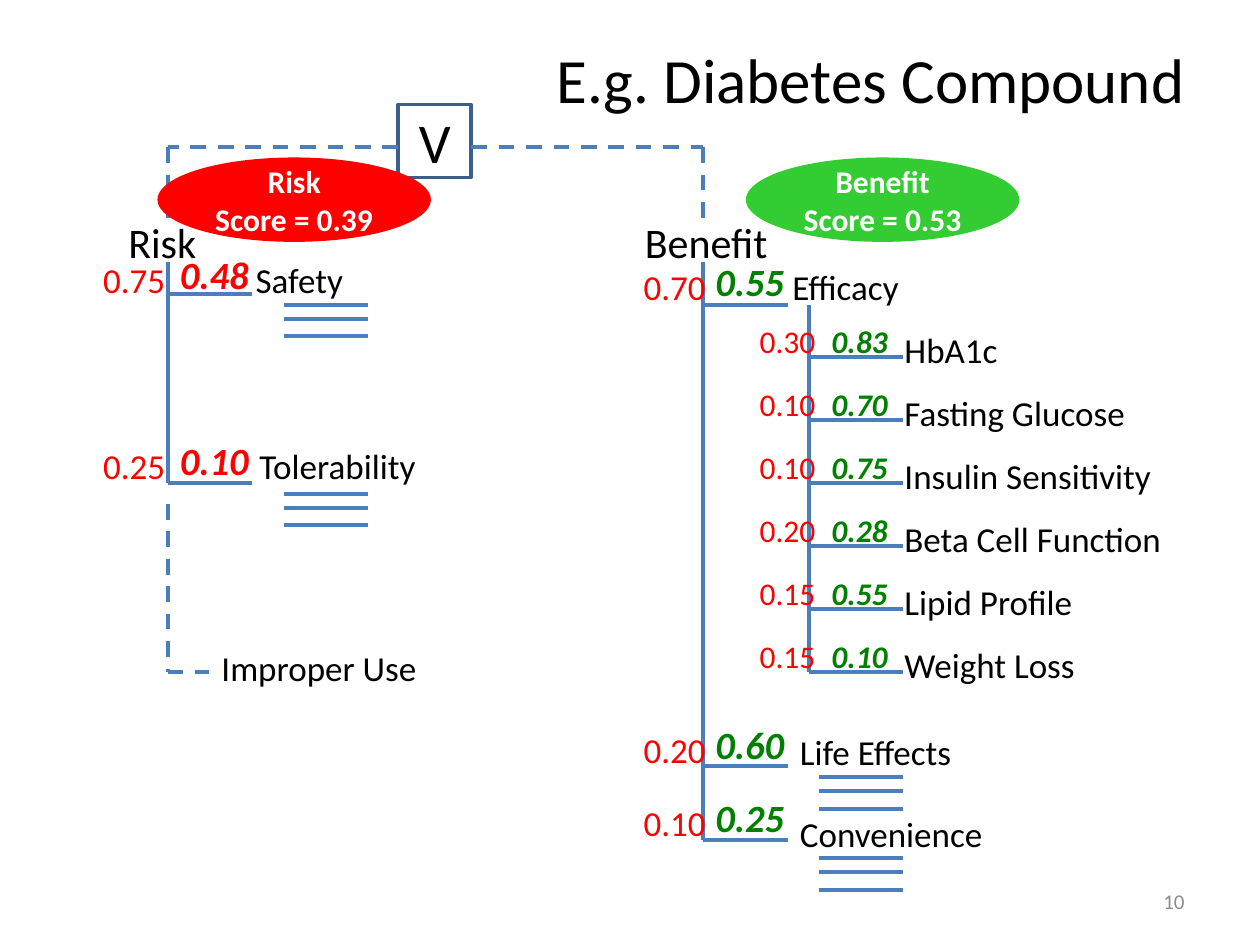
from dataclasses import dataclass

from lxml import etree
from pptx import Presentation
from pptx.dml.color import RGBColor
from pptx.enum.dml import MSO_LINE
from pptx.enum.shapes import MSO_CONNECTOR, MSO_SHAPE
from pptx.enum.text import MSO_ANCHOR, MSO_AUTO_SIZE, PP_ALIGN
from pptx.oxml.ns import qn
from pptx.util import Inches, Pt

STRAIGHT = MSO_CONNECTOR.STRAIGHT
DASH = MSO_LINE.DASH
OVAL, RECTANGLE = MSO_SHAPE.OVAL, MSO_SHAPE.RECTANGLE
TOP, MIDDLE = MSO_ANCHOR.TOP, MSO_ANCHOR.MIDDLE
FIT = MSO_AUTO_SIZE.SHAPE_TO_FIT_TEXT
LEFT, CENTER, RIGHT = PP_ALIGN.LEFT, PP_ALIGN.CENTER, PP_ALIGN.RIGHT


@dataclass(frozen=True)
class Theme:
    font: str = "Calibri"
    ink: str = "000000"
    white: str = "FFFFFF"
    gray: str = "8C8C8C"
    red: str = "FF0000"
    green: str = "008000"
    oval_green: str = "33CC33"
    branch: str = "4B7EBC"
    root_edge: str = "3A5F8C"
    title: int = 36
    root: int = 32
    heading: int = 24
    score: int = 22
    label: int = 20
    detail: int = 18
    number: int = 12
    branch_width: float = 2.25
    root_width: float = 2


THEME = Theme()


@dataclass(frozen=True)
class Box:
    left: float
    top: float
    width: float
    height: float

    def inner(self, left, top, width, height):
        return Box(self.left + left, self.top + top, width, height)

    def lengths(self):
        return [Inches(value) for value in (self.left, self.top, self.width, self.height)]


@dataclass(frozen=True)
class Criterion:
    name: str
    weight: str
    score: str
    line: float
    weight_top: float
    name_left: float
    name_top: float
    name_width: float
    marks_top: float | None = None


def write(frame, lines, size, color, align=LEFT, bold=False, italic=False):
    for index, line in enumerate(lines):
        para = frame.paragraphs[0] if index == 0 else frame.add_paragraph()
        para.text = line
        para.alignment = align
        para.font.name = THEME.font
        para.font.size = Pt(size)
        para.font.color.rgb = RGBColor.from_string(color)
        para.font.bold = bold
        para.font.italic = italic


def add_label(page, box, text, size, color=THEME.ink, emphasis=False):
    frame = page.shapes.add_textbox(*box.lengths()).text_frame
    frame.word_wrap = False
    frame.auto_size = FIT
    frame.vertical_anchor = TOP
    write(frame, [text], size, color, bold=emphasis, italic=emphasis)


def add_right_text(page, box, text, size, color):
    frame = page.shapes.add_textbox(*box.lengths()).text_frame
    frame.word_wrap = True
    frame.vertical_anchor = MIDDLE
    write(frame, [text], size, color, RIGHT)


def add_branch(page, start_x, start_y, end_x, end_y, dashed=False):
    ends = [Inches(value) for value in (start_x, start_y, end_x, end_y)]
    branch = page.shapes.add_connector(STRAIGHT, *ends)
    branch.line.color.rgb = RGBColor.from_string(THEME.branch)
    branch.line.width = Pt(THEME.branch_width)
    if dashed:
        branch.line.dash_style = DASH
    etree.SubElement(branch._element.spPr, qn("a:effectLst"))


def add_oval(page, box, lines, fill):
    oval = page.shapes.add_shape(OVAL, *box.lengths())
    oval.shadow.inherit = False
    oval.fill.solid()
    oval.fill.fore_color.rgb = RGBColor.from_string(fill)
    oval.line.fill.background()
    oval.text_frame.vertical_anchor = MIDDLE
    write(oval.text_frame, lines, THEME.detail, THEME.white, CENTER, bold=True)


def add_root(page, box):
    right = box.left + box.width
    node_box = box.inner(1.83, 0, 0.58, 0.58)
    node = page.shapes.add_shape(RECTANGLE, *node_box.lengths())
    node.shadow.inherit = False
    node.fill.background()
    node.line.color.rgb = RGBColor.from_string(THEME.root_edge)
    node.line.width = Pt(THEME.root_width)
    node.text_frame.vertical_anchor = MIDDLE
    write(node.text_frame, ["V"], THEME.root, THEME.ink, CENTER)
    level = box.top + 0.34
    for outer, inner in ((box.left, node_box.left), (right, node_box.left + node_box.width)):
        add_branch(page, inner, level, outer, level, dashed=True)
        add_branch(page, outer, level, outer, box.top + box.height, dashed=True)


def add_tree(page, box, heading, heading_left, heading_width, trunk, criteria, score_color):
    add_label(page, box.inner(heading_left, 0, heading_width, 0.5), heading, THEME.heading)
    trunk_x = box.left + trunk
    add_branch(page, trunk_x, box.top + 0.41, trunk_x, box.top + criteria[-1].line)
    for item in criteria:
        level = box.top + item.line
        add_branch(page, trunk_x, level, trunk_x + 0.67, level)
        add_label(page, box.inner(0, item.weight_top, 0.7, 0.44),
                  item.weight, THEME.label, THEME.red)
        add_label(page, box.inner(trunk, item.weight_top - 0.06, 0.75, 0.47),
                  item.score, THEME.score, score_color, emphasis=True)
        add_label(page, box.inner(trunk + item.name_left, item.name_top, item.name_width, 0.44),
                  item.name, THEME.label)
        if item.marks_top is not None:
            for gap in (0, 0.11, 0.25):
                mark_y = box.top + item.marks_top + gap
                add_branch(page, trunk_x + 0.92, mark_y, trunk_x + 1.59, mark_y)


def add_improper_use(page, box):
    bottom = box.top + 1.33
    add_branch(page, box.left, box.top, box.left, bottom, dashed=True)
    add_branch(page, box.left, bottom, box.left + 0.33, bottom, dashed=True)
    add_label(page, box.inner(0.33, 1.08, 1.76, 0.44), "Improper Use", THEME.label)


def add_efficacy_details(page, box, details):
    spine = box.left + 0.49
    add_branch(page, spine, box.top, spine, box.top + 2.91)
    for index, (weight, score, name, name_width) in enumerate(details):
        row = box.inner(0, index * 0.5, box.width, 0.5)
        add_branch(page, spine, row.top + 0.41, spine + 0.75, row.top + 0.41)
        add_label(page, row.inner(0, 0.09, 0.65, 0.4), weight, THEME.detail, THEME.red)
        add_label(page, row.inner(0.57, 0.09, 0.65, 0.4), score, THEME.detail,
                  THEME.green, emphasis=True)
        add_label(page, row.inner(1.15, 0.14, name_width, 0.44), name, THEME.label)


def main():
    deck = Presentation()
    deck.slide_width, deck.slide_height = Inches(10), Inches(7.5)
    page = deck.slides.add_slide(deck.slide_layouts[6])
    risks = [
        Criterion("Safety", "0.75", "0.48", 0.66, 0.33, 0.6, 0.33, 0.9, 0.75),
        Criterion("Tolerability", "0.25", "0.10", 2.16, 1.81, 0.63, 1.81, 1.46, 2.25),
    ]
    benefits = [
        Criterion("Efficacy", "0.70", "0.55", 0.75, 0.39, 0.61, 0.39, 1.06),
        Criterion("Life Effects", "0.20", "0.60", 4.41, 4.06, 0.67, 4.08, 1.42, 4.5),
        Criterion("Convenience", "0.10", "0.25", 5, 4.64, 0.67, 4.73, 1.66, 5.14),
    ]
    details = [
        ("0.30", "0.83", "HbA1c", 0.95),
        ("0.10", "0.70", "Fasting Glucose", 1.97),
        ("0.10", "0.75", "Insulin Sensitivity", 2.18),
        ("0.20", "0.28", "Beta Cell Function", 2.26),
        ("0.15", "0.55", "Lipid Profile", 1.55),
        ("0.15", "0.10", "Weight Loss", 1.57),
    ]
    add_right_text(page, Box(0.5, 0, 9, 1.25), "E.g. Diabetes Compound", THEME.title, THEME.ink)
    add_efficacy_details(page, Box(5.93, 2.42, 3.41, 3), details)
    add_tree(page, Box(5.01, 1.67, 2.9, 5.39), "Benefit", 0.01, 1.19, 0.57,
             benefits, THEME.green)
    add_oval(page, Box(5.92, 1.25, 2.17, 0.67), ["Benefit Score = 0.53"], THEME.oval_green)
    add_root(page, Box(1.33, 0.83, 4.25, 0.92))
    add_tree(page, Box(0.72, 1.67, 2.7, 2.5), "Risk", 0.2, 0.75, 0.61, risks, THEME.red)
    add_improper_use(page, Box(1.33, 4, 2.09, 1.52))
    add_oval(page, Box(1.25, 1.25, 2.17, 0.67), ["Risk", "Score = 0.39"], THEME.red)
    add_right_text(page, Box(7.17, 6.95, 2.33, 0.4), "10", THEME.number, THEME.gray)
    deck.save("out.pptx")


if __name__ == "__main__":
    main()
